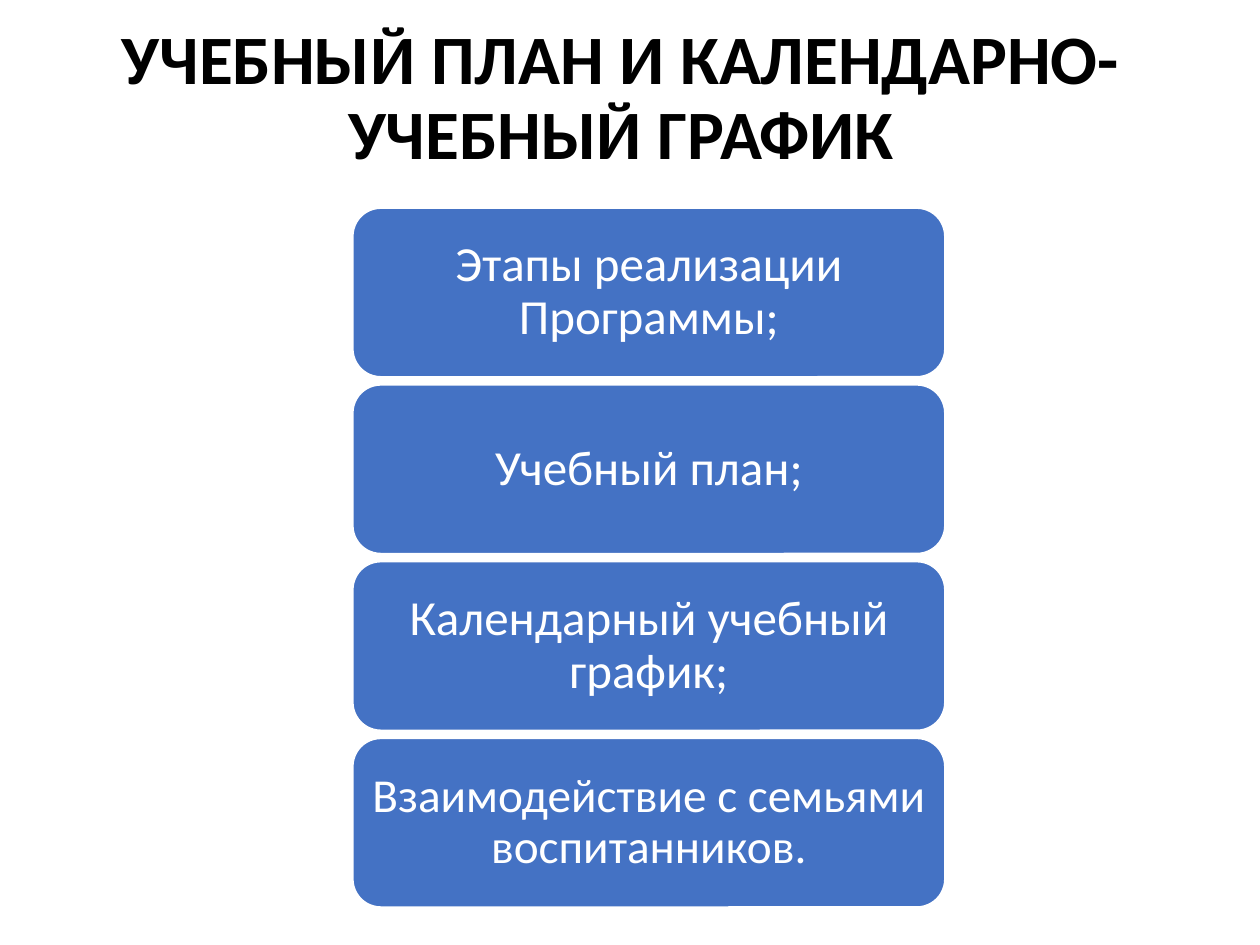
"""Build the slide on the study plan and calendar schedule."""
from pptx import Presentation
from pptx.dml.color import RGBColor
from pptx.enum.shapes import MSO_SHAPE
from pptx.enum.text import MSO_ANCHOR, MSO_AUTO_SIZE, PP_ALIGN
from pptx.util import Pt

ROUNDED = MSO_SHAPE.ROUNDED_RECTANGLE
MIDDLE = MSO_ANCHOR.MIDDLE
NO_FIT = MSO_AUTO_SIZE.NONE
CENTER = PP_ALIGN.CENTER
BLACK = RGBColor(0x00, 0x00, 0x00)
WHITE = RGBColor(0xFF, 0xFF, 0xFF)
BLUE = RGBColor(0x44, 0x72, 0xC4)

TITLE = "УЧЕБНЫЙ ПЛАН И КАЛЕНДАРНО-УЧЕБНЫЙ ГРАФИК"
SECTIONS = [
    ("Этапы реализации Программы;", 28),
    ("Учебный план;", 28),
    ("Календарный учебный график;", 28),
    ("Взаимодействие с семьями воспитанников.", 27),
]
LEFT, TOP, WIDTH, HEIGHT, STEP = 201.6, 118.9, 338.4, 96.5, 101


def set_values(target, values):
    for name, value in values.items():
        setattr(target, name, value)


def write(box, text, size, color, bold, insets):
    frame = box.text_frame
    frame.text = text
    set_values(frame, {"word_wrap": True, "auto_size": NO_FIT,
                       "vertical_anchor": MIDDLE, **insets})
    para = frame.paragraphs[0]
    set_values(para, {"alignment": CENTER, "line_spacing": 0.9,
                      "space_before": Pt(0)})
    span = para.runs[0]
    set_values(span.font, {"name": "Calibri", "size": Pt(size), "bold": bold})
    span.font.color.rgb = color


deck = Presentation()
set_values(deck, {"slide_width": Pt(720), "slide_height": Pt(540)})
page = deck.slides.add_slide(deck.slide_layouts[5])

title = page.shapes.title
set_values(title, {"left": Pt(44.6), "top": Pt(33.8),
                   "width": Pt(620.6), "height": Pt(89.3)})
write(title, TITLE, 39.6, BLACK, True, {"margin_bottom": Pt(47)})

section_insets = {"margin_left": Pt(3.6), "margin_right": Pt(3.6),
                  "margin_top": Pt(4.3), "margin_bottom": Pt(4.3)}
group = page.shapes.add_group_shape()
for index, (text, size) in enumerate(SECTIONS):
    box = group.shapes.add_shape(ROUNDED, Pt(LEFT), Pt(TOP + index * STEP),
                                 Pt(WIDTH), Pt(HEIGHT))
    box.shadow.inherit = False
    box.fill.solid()
    box.fill.fore_color.rgb = BLUE
    box.line.color.rgb = WHITE
    box.line.width = Pt(1)
    write(box, text, size, WHITE, False, section_insets)

deck.save("out.pptx")
